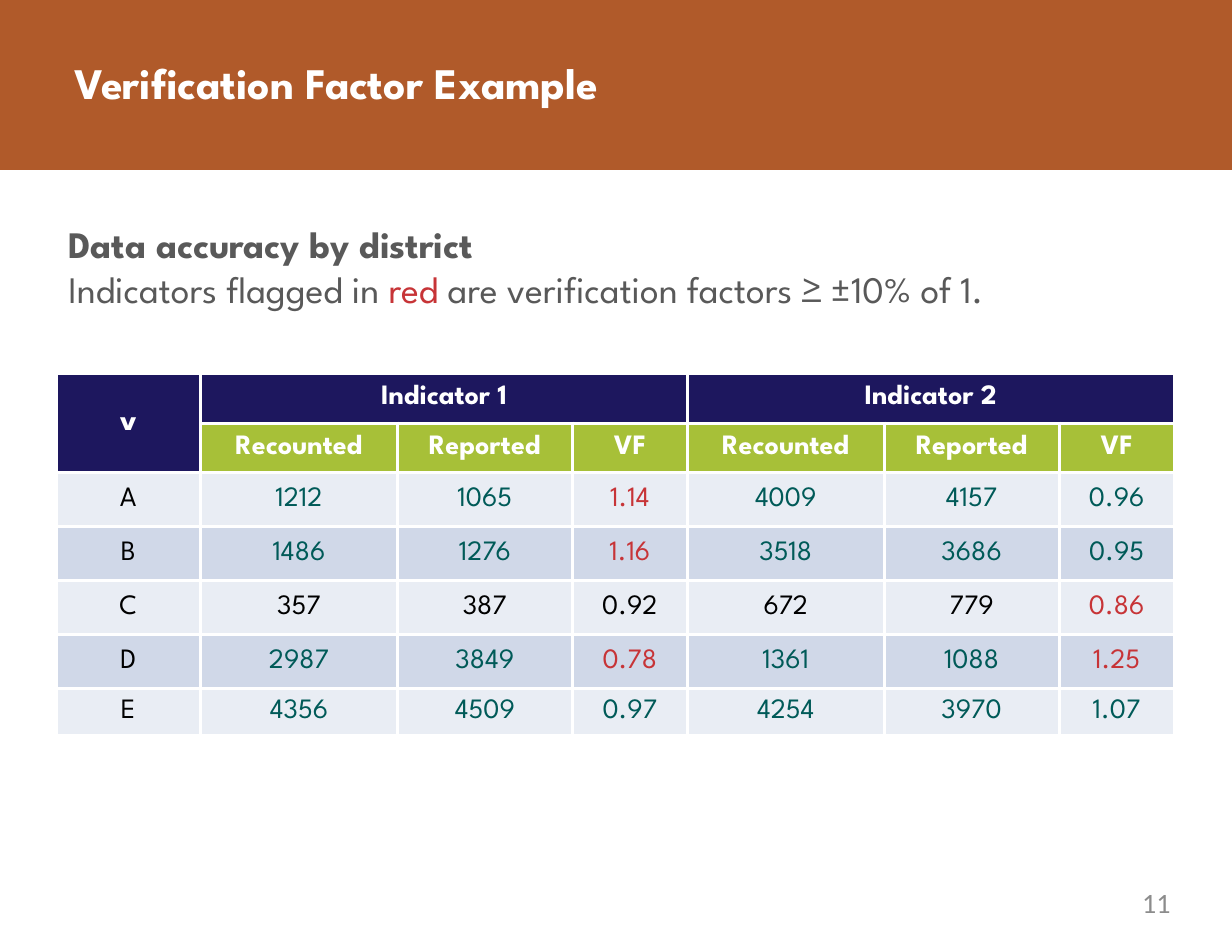
import pptx
import pptx.dml.color
import pptx.enum.shapes
import pptx.enum.text
import pptx.oxml
import pptx.oxml.ns
import pptx.util

Pt = pptx.util.Pt
RGBColor = pptx.dml.color.RGBColor
ALIGN = pptx.enum.text.PP_ALIGN
MIDDLE = pptx.enum.text.MSO_ANCHOR.MIDDLE

WHITE = RGBColor(0xFF, 0xFF, 0xFF)
BLACK = RGBColor(0, 0, 0)
RUST = RGBColor(0xB0, 0x5A, 0x2A)
NAVY = RGBColor(0x1D, 0x17, 0x5E)
LIME = RGBColor(0xA7, 0xC0, 0x38)
TEAL = RGBColor(0x00, 0x5A, 0x58)
RED = RGBColor(0xC7, 0x34, 0x37)
GRAY = RGBColor(0x59, 0x59, 0x59)
PALE_GRAY = RGBColor(0x8C, 0x8C, 0x8C)
BANDS = [RGBColor(0xE9, 0xED, 0xF4), RGBColor(0xD0, 0xD8, 0xE8)]
FONT = "League Spartan"

# Content
TITLE = "Verification Factor Example"
HEADING = "Data accuracy by district"
NOTE = [("Indicators flagged in ", GRAY), ("red ", RED),
        ("are verification factors ≥ ±10% of 1.", GRAY)]
CORNER = "v"
INDICATORS = ["Indicator 1", "Indicator 2"]
MEASURES = ["Recounted", "Reported", "VF"]
DISTRICTS = [
    ("A", TEAL, ["1212", "1065", "1.14", "4009", "4157", "0.96"]),
    ("B", TEAL, ["1486", "1276", "1.16", "3518", "3686", "0.95"]),
    ("C", BLACK, ["357", "387", "0.92", "672", "779", "0.86"]),
    ("D", TEAL, ["2987", "3849", "0.78", "1361", "1088", "1.25"]),
    ("E", TEAL, ["4356", "4509", "0.97", "4254", "3970", "1.07"]),
]
PAGE_NUMBER = "11"
TOLERANCE = 0.1

# Table geometry
TABLE_LEFT, TABLE_TOP = 36, 240
COLUMN_WIDTHS = [93] + [126.5, 112.5, 74] * len(INDICATORS)
ROW_HEIGHTS = [32, 32] + [34.75] * 4 + [24.5]
BORDER_WIDTH = 2.25


def add_span(para, text, color, size, bold=False, name=FONT):
    span = para.add_run()
    span.text = text
    span.font.color.rgb = color
    values = {"size": Pt(size), "bold": bold, "name": name}
    for key, value in values.items():
        setattr(span.font, key, value)


def add_box(page, left, top, width, height, inset=(0, 0)):
    box = page.shapes.add_textbox(Pt(left), Pt(top), Pt(width), Pt(height))
    frame = box.text_frame
    across, down = inset
    values = {"word_wrap": True,
              "margin_left": Pt(across), "margin_right": Pt(across),
              "margin_top": Pt(down), "margin_bottom": Pt(down)}
    for key, value in values.items():
        setattr(frame, key, value)
    return frame


def add_borders(cell):
    properties = cell._tc.get_or_add_tcPr()
    for index, side in enumerate(["lnL", "lnR", "lnT", "lnB"]):
        border = pptx.oxml.parse_xml(
            f'<a:{side} {pptx.oxml.ns.nsdecls("a")} w="{Pt(BORDER_WIDTH)}">'
            f'<a:solidFill><a:srgbClr val="{WHITE}"/></a:solidFill></a:{side}>')
        properties.insert(index, border)


def fill_cell(cell, text, fill, color, bold=False, size=18):
    values = {"vertical_anchor": MIDDLE,
              "margin_left": Pt(8), "margin_right": Pt(8),
              "margin_top": Pt(4), "margin_bottom": Pt(4)}
    for key, value in values.items():
        setattr(cell, key, value)
    cell.fill.solid()
    cell.fill.fore_color.rgb = fill
    para = cell.text_frame.paragraphs[0]
    para.alignment = ALIGN.CENTER
    add_span(para, text, color, size, bold)


def add_accuracy_table(page):
    frame = page.shapes.add_table(
        len(ROW_HEIGHTS), len(COLUMN_WIDTHS), Pt(TABLE_LEFT), Pt(TABLE_TOP),
        Pt(sum(COLUMN_WIDTHS)), Pt(sum(ROW_HEIGHTS)))
    table = frame.table
    table.first_row = table.horz_banding = False
    for column, width in zip(table.columns, COLUMN_WIDTHS):
        column.width = Pt(width)
    for row, height in zip(table.rows, ROW_HEIGHTS):
        row.height = Pt(height)

    # Headers
    table.cell(0, 0).merge(table.cell(1, 0))
    fill_cell(table.cell(0, 0), CORNER, NAVY, WHITE, True, 20)
    group = len(MEASURES)
    for number, indicator in enumerate(INDICATORS):
        first = 1 + number * group
        table.cell(0, first).merge(table.cell(0, first + group - 1))
        fill_cell(table.cell(0, first), indicator, NAVY, WHITE, True)
        for offset, measure in enumerate(MEASURES):
            fill_cell(table.cell(1, first + offset), measure, LIME, WHITE, True)

    # District rows, with factors far from 1 in red
    for number, (district, color, values) in enumerate(DISTRICTS):
        row, fill = number + 2, BANDS[number % 2]
        fill_cell(table.cell(row, 0), district, fill, BLACK)
        for column, value in enumerate(values, 1):
            is_factor = column % group == 0
            flagged = is_factor and abs(float(value) - 1) >= TOLERANCE
            fill_cell(table.cell(row, column), value, fill,
                      RED if flagged else color)

    for cell in table.iter_cells():
        add_borders(cell)


def main():
    deck = pptx.Presentation()
    deck.slide_width, deck.slide_height = Pt(792), Pt(612)
    page = deck.slides.add_slide(deck.slide_layouts[6])

    # Title band
    band = page.shapes.add_shape(pptx.enum.shapes.MSO_SHAPE.RECTANGLE,
                                 0, 0, deck.slide_width, Pt(109.25))
    band.shadow.inherit = False
    band.fill.solid()
    band.fill.fore_color.rgb = RUST
    band.line.fill.background()
    title = add_box(page, 48, 36, 758, 34)
    add_span(title.paragraphs[0], TITLE, WHITE, 28, True)

    add_accuracy_table(page)

    # Introduction
    intro = add_box(page, 36, 138.25, 732, 66, (8, 4))
    add_span(intro.paragraphs[0], HEADING, GRAY, 24, True)
    para = intro.add_paragraph()
    for text, color in NOTE:
        add_span(para, text, color, 24)

    # Page number
    para = add_box(page, 570, 569.5, 182.5, 30).paragraphs[0]
    para.alignment = ALIGN.RIGHT
    add_span(para, PAGE_NUMBER, PALE_GRAY, 18, name="Calibri")

    deck.save("out.pptx")


if __name__ == "__main__":
    main()
